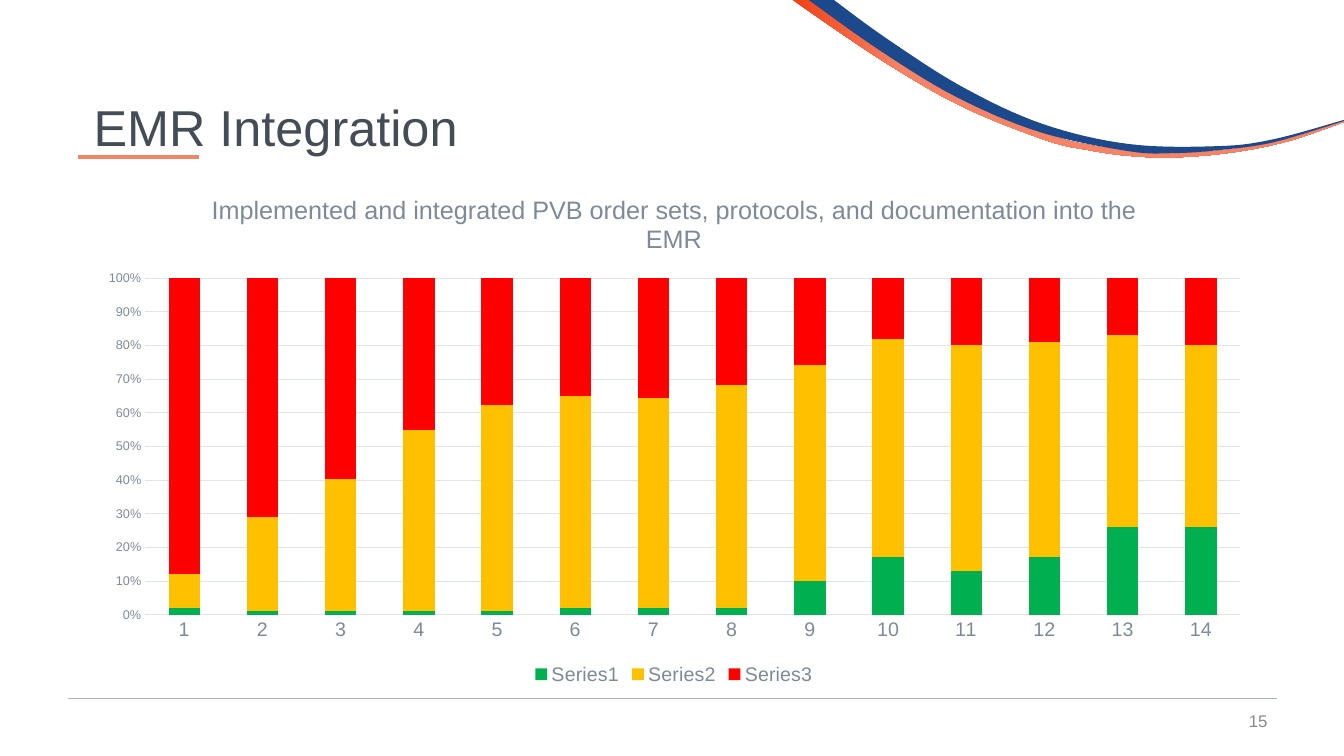
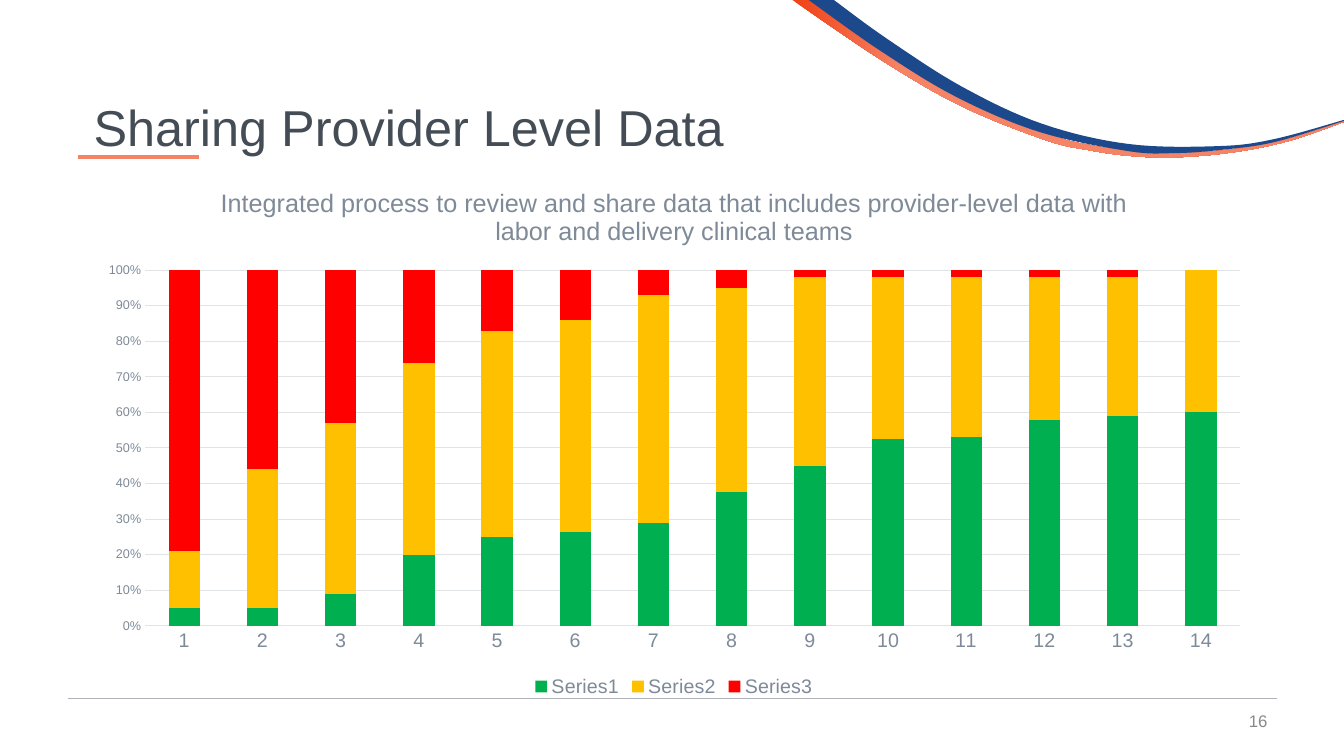
from lxml.etree import SubElement
from pptx import Presentation
from pptx.chart.data import CategoryChartData
from pptx.dml.color import RGBColor
from pptx.enum.chart import XL_CHART_TYPE, XL_LEGEND_POSITION, XL_TICK_MARK
from pptx.enum.shapes import MSO_CONNECTOR
from pptx.enum.text import MSO_ANCHOR, PP_ALIGN
from pptx.oxml.ns import qn
from pptx.util import Inches, Pt

FONT = "Arial"
TITLE_COLOUR, CHART_TEXT, FOOTER_TEXT = "444C55", "7E8A98", "898989"
ORANGE, DEEP_ORANGE, BLUE = "F58366", "F04115", "1C498B"
FOOTER_LINE, GRID_LINE = "AFB3B9", "E1E4E7"
SERIES_COLOURS = ["00B050", "FFC000", "FF0000"]

# Upper and lower edges of the two ribbons, as points on smooth curves
ORANGE_EDGES = [
    [(8.05, 0), (8.82, 0.54), (9.58, 0.99), (10.39, 1.33), (10.81, 1.44),
     (11.25, 1.5), (11.68, 1.52), (12.23, 1.48), (12.77, 1.38), (13.33, 1.2)],
    [(13.33, 1.21), (12.78, 1.4), (12.24, 1.51), (11.69, 1.56), (11.24, 1.55),
     (10.8, 1.49), (10.37, 1.39), (9.55, 1.06), (8.78, 0.62), (7.86, 0)],
]
BLUE_EDGES = [
    [(8.27, 0), (8.79, 0.38), (9.54, 0.86), (10.34, 1.23), (11.2, 1.43),
     (12.09, 1.45), (12.64, 1.38), (13.33, 1.19)],
    [(13.33, 1.2), (12.64, 1.41), (12.09, 1.49), (11.64, 1.52), (11.19, 1.5),
     (10.31, 1.31), (9.48, 0.96), (8.71, 0.49), (8.02, 0)],
]

PAGES = [
    {
        "title": "EMR Integration",
        "number": 15,
        "chart_title": "Implemented and integrated PVB order sets, protocols, "
                       "and documentation into the EMR",
        "box": (0.83, 1.72, 11.71, 5.12),
        "plot": (1.44, 2.76, 10.86, 3.34),
        "series": [
            [2, 1, 1, 1, 1, 2, 2, 2, 10, 17, 13, 17, 26, 26],
            [10, 28, 39, 54, 62, 63, 63, 67, 65, 65, 67, 64, 57, 54],
            [88, 71, 59, 45, 38, 35, 36, 32, 26, 18, 20, 19, 17, 20],
        ],
    },
    {
        "title": "Sharing Provider Level Data",
        "number": 16,
        "chart_title": "Integrated process to review and share data that includes "
                       "provider-level data with labor and delivery clinical teams",
        "box": (0.83, 1.64, 11.71, 5.32),
        "plot": (1.44, 2.68, 10.86, 3.53),
        "series": [
            [5, 5, 9, 20, 25, 26, 29, 38, 45, 53, 53, 58, 59, 60],
            [16, 39, 48, 54, 58, 59, 64, 58, 53, 46, 45, 40, 39, 40],
            [79, 56, 43, 26, 17, 14, 7, 5, 2, 2, 2, 2, 2, 0],
        ],
    },
]


def colour(value):
    return RGBColor.from_string(value)


def style_font(font, size, text_colour):
    font.name = FONT
    font.size = Pt(size)
    font.bold = False
    font.color.rgb = colour(text_colour)


def add_text(page, text, box, size, text_colour, align=PP_ALIGN.LEFT, spacing=1.0):
    frame = page.shapes.add_textbox(*map(Inches, box)).text_frame
    frame.word_wrap = True
    frame.vertical_anchor = MSO_ANCHOR.MIDDLE
    para = frame.paragraphs[0]
    para.alignment = align
    para.line_spacing = spacing
    span = para.add_run()
    span.text = text
    style_font(span.font, size, text_colour)


def add_rule(page, left, top, width, line_colour, weight):
    rule = page.shapes.add_connector(
        MSO_CONNECTOR.STRAIGHT, Inches(left), Inches(top), Inches(left + width), Inches(top))
    rule.line.color.rgb = colour(line_colour)
    rule.line.width = Pt(weight)
    SubElement(rule.element.spPr, qn("a:effectLst"))


def smooth_curve(knots, steps=8):
    """Points on a Catmull-Rom curve through the knots."""
    padded = [knots[0], *knots, knots[-1]]
    points = [knots[0]]
    for before, start, end, after in zip(padded, padded[1:], padded[2:], padded[3:]):
        for step in range(1, steps + 1):
            t = step / steps
            points.append(tuple(
                0.5 * (2 * b + (c - a) * t + (2 * a - 5 * b + 4 * c - d) * t ** 2
                       + (3 * b - a - 3 * c + d) * t ** 3)
                for a, b, c, d in zip(before, start, end, after)))
    return points


def add_ribbon(page, edges):
    points = [(Inches(x), Inches(y)) for edge in edges for x, y in smooth_curve(edge)]
    builder = page.shapes.build_freeform(*points[0])
    builder.add_line_segments(points[1:], close=True)
    ribbon = builder.convert_to_shape()
    ribbon.shadow.inherit = False
    ribbon.line.fill.background()
    return ribbon


def add_frame(page, title, number):
    # Corner ribbons
    orange_fill = add_ribbon(page, ORANGE_EDGES).fill
    orange_fill.gradient()
    orange_fill.gradient_angle = 0
    for stop, position, value in zip(
            orange_fill.gradient_stops, (0, 0.2), (DEEP_ORANGE, ORANGE)):
        stop.position = position
        stop.color.rgb = colour(value)
    blue_fill = add_ribbon(page, BLUE_EDGES).fill
    blue_fill.solid()
    blue_fill.fore_color.rgb = colour(BLUE)

    # Footer and title
    add_rule(page, 0.67, 6.93, 12, FOOTER_LINE, 0.5)
    add_rule(page, 0.77, 1.56, 1.2, ORANGE, 2.5)
    add_text(page, str(number), (9.67, 6.95, 3, 0.4), 12, FOOTER_TEXT, align=PP_ALIGN.RIGHT)
    add_text(page, title, (0.83, 0.57, 12, 1.45), 36, TITLE_COLOUR, spacing=0.9)


def place_plot(chart, box, plot):
    """Fix the inner plot area, given in slide inches, within the chart box."""
    area = chart.element.find(qn("c:chart")).find(qn("c:plotArea"))
    for old_layout in area.findall(qn("c:layout")):
        area.remove(old_layout)
    layout = SubElement(area, qn("c:layout"))
    area.insert(0, layout)
    manual = SubElement(layout, qn("c:manualLayout"))
    left, top, width, height = box
    settings = {
        "layoutTarget": "inner", "xMode": "edge", "yMode": "edge",
        "x": (plot[0] - left) / width, "y": (plot[1] - top) / height,
        "w": plot[2] / width, "h": plot[3] / height,
    }
    for tag, value in settings.items():
        SubElement(manual, qn(f"c:{tag}")).set("val", str(value))


def add_stacked_chart(page, title, box, plot, series):
    chart_data = CategoryChartData()
    chart_data.categories = [str(i) for i in range(1, len(series[0]) + 1)]
    for index, values in enumerate(series, 1):
        chart_data.add_series(f"Series{index}", values)
    chart = page.shapes.add_chart(
        XL_CHART_TYPE.COLUMN_STACKED_100, *map(Inches, box), chart_data).chart
    style_font(chart.font, 10, TITLE_COLOUR)
    place_plot(chart, box, plot)

    # Title and legend
    chart.has_title = True
    chart.chart_title.include_in_layout = False
    span = chart.chart_title.text_frame.paragraphs[0].add_run()
    span.text = title
    style_font(span.font, 18, CHART_TEXT)
    chart.has_legend = True
    chart.legend.position = XL_LEGEND_POSITION.BOTTOM
    chart.legend.include_in_layout = False
    style_font(chart.legend.font, 14, CHART_TEXT)

    # Columns
    columns = chart.plots[0]
    columns.gap_width = 150
    columns.overlap = 100
    columns.vary_by_categories = False
    for column_series, value in zip(columns.series, SERIES_COLOURS):
        column_series.format.fill.solid()
        column_series.format.fill.fore_color.rgb = colour(value)

    # Axes
    categories, percents = chart.category_axis, chart.value_axis
    for axis, size in ((categories, 14), (percents, 9)):
        axis.major_tick_mark = XL_TICK_MARK.NONE
        axis.minor_tick_mark = XL_TICK_MARK.NONE
        style_font(axis.tick_labels.font, size, CHART_TEXT)
    percents.tick_labels.number_format = "0%"
    percents.tick_labels.number_format_is_linked = False
    percents.format.line.fill.background()
    percents.has_major_gridlines = True
    for line in (categories.format.line, percents.major_gridlines.format.line):
        line.color.rgb = colour(GRID_LINE)
        line.width = Pt(0.75)


def main():
    deck = Presentation()
    deck.slide_width, deck.slide_height = Inches(13.33), Inches(7.5)
    for content in PAGES:
        page = deck.slides.add_slide(deck.slide_layouts[6])
        add_frame(page, content["title"], content["number"])
        add_stacked_chart(page, content["chart_title"], content["box"],
                          content["plot"], content["series"])
    deck.save("out.pptx")


if __name__ == "__main__":
    main()
